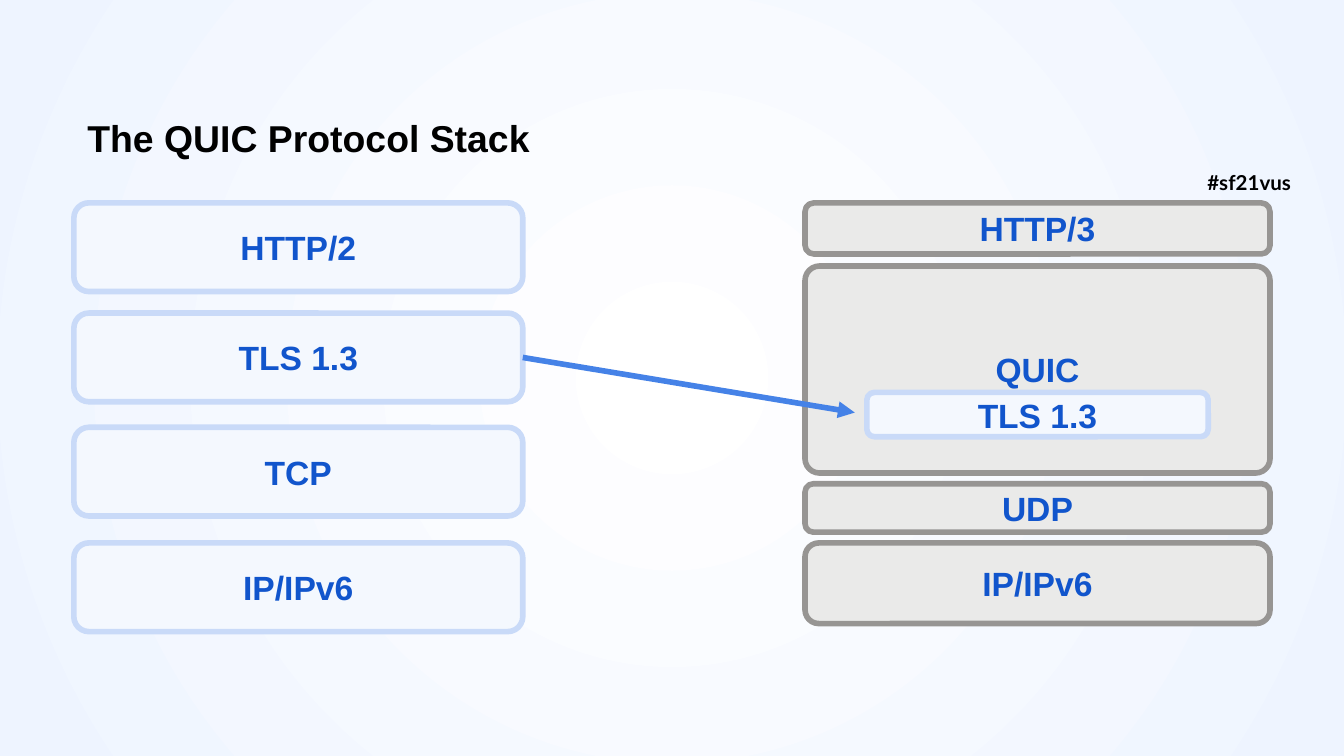
from lxml.etree import SubElement
from pptx import Presentation
from pptx.dml.color import RGBColor
from pptx.enum.shapes import MSO_CONNECTOR, MSO_SHAPE
from pptx.enum.text import MSO_ANCHOR, MSO_AUTO_SIZE, PP_ALIGN
from pptx.oxml.ns import qn
from pptx.util import Inches, Pt

COLS, ROWS = 100, 56.25
CELL = Inches(10) / COLS
BLUE = ("F4F8FE", "C9DAF8")
GREY = ("EAEAE9", "979593")
OLD_STACK = [("HTTP/2", 15.1), ("TLS 1.3", 23.3), ("TCP", 31.8), ("IP/IPv6", 40.4)]
NEW_STACK = [("HTTP/3", 15.1, 3.8), ("QUIC", 19.8, 15.4), ("UDP", 36, 3.6), ("IP/IPv6", 40.4, 6)]


def grid(*cells):
    """Convert grid cells to lengths."""
    return [round(n * CELL) for n in cells]


def rgb(color):
    """Convert a hex string to a colour."""
    return RGBColor.from_string(color)


def add_run(p, text, size, color, font="Arial"):
    """Add a bold run to a paragraph."""
    r = p.add_run()
    r.text = text
    r.font.name, r.font.size, r.font.bold = font, Pt(size), True
    r.font.color.rgb = rgb(color)


def set_margins(tf):
    """Give a text frame equal insets on all sides."""
    tf.margin_left = tf.margin_right = tf.margin_top = tf.margin_bottom = Inches(0.1)


def set_background(s):
    """Fill the slide with a gradient that spreads from its centre."""
    fill = s.background.fill
    fill.gradient()
    for stop, color in zip(fill.gradient_stops, ("FFFFFF", "EEF4FF")):
        stop.color.rgb = rgb(color)
    grad = s.element.find(".//" + qn("a:gradFill"))
    grad.remove(grad.find(qn("a:lin")))
    way = SubElement(grad, qn("a:path"), path="circle")
    SubElement(way, qn("a:fillToRect"), {side: "50000" for side in "ltrb"})


def set_title(s, text):
    """Place and fill the title placeholder."""
    sp = s.shapes.title
    sp.left, sp.top, sp.width, sp.height = grid(5.5, 7.85, 74.5, 4.8)
    tf = sp.text_frame
    tf.auto_size, tf.vertical_anchor = MSO_AUTO_SIZE.NONE, MSO_ANCHOR.MIDDLE
    set_margins(tf)
    p = tf.paragraphs[0]
    p.alignment = PP_ALIGN.LEFT
    add_run(p, text, 20, "000000")


def add_hashtag(s, text):
    """Add the event hashtag at the right edge."""
    tf = s.shapes.add_textbox(*grid(88.85, 11.75, 11.15, 3.9)).text_frame
    tf.word_wrap, tf.auto_size = True, MSO_AUTO_SIZE.SHAPE_TO_FIT_TEXT
    set_margins(tf)
    add_run(tf.paragraphs[0], text, 11, "000000", "Lato")


def add_layer(s, text, box, colors, corner=0.17):
    """Add a rounded box for one protocol layer."""
    sp = s.shapes.add_shape(MSO_SHAPE.ROUNDED_RECTANGLE, *grid(*box))
    sp.adjustments[0] = corner
    sp.shadow.inherit = False
    sp.fill.solid()
    sp.fill.fore_color.rgb = rgb(colors[0])
    sp.line.color.rgb = rgb(colors[1])
    sp.line.width = Pt(3)
    tf = sp.text_frame
    tf.word_wrap, tf.vertical_anchor = True, MSO_ANCHOR.MIDDLE
    p = tf.paragraphs[0]
    p.alignment = PP_ALIGN.CENTER
    add_run(p, text, 18, "1155CC")
    return sp


def add_arrow(s, source, end):
    """Draw an arrow from a box's right side to a grid point."""
    start = source.left + source.width, source.top + source.height // 2
    line = s.shapes.add_connector(MSO_CONNECTOR.STRAIGHT, *start, *grid(*end))
    line.begin_connect(source, 3)
    line.line.color.rgb = rgb("4582E7")
    line.line.width = Pt(3)
    ln = line._element.spPr.find(qn("a:ln"))
    SubElement(ln, qn("a:tailEnd"), type="triangle")
    SubElement(line._element.spPr, qn("a:effectLst"))


def main():
    """Build the slide."""
    prs = Presentation()
    prs.slide_width, prs.slide_height = grid(COLS, ROWS)
    s = prs.slides.add_slide(prs.slide_layouts[5])
    set_background(s)
    add_hashtag(s, "#sf21vus")
    set_title(s, "The QUIC Protocol Stack")
    layers = {text: add_layer(s, text, (5.5, top, 33.4, 6.6), BLUE) for text, top in OLD_STACK}
    for text, top, height in NEW_STACK:
        corner = 0.07 if text == "QUIC" else 0.17
        add_layer(s, text, (59.9, top, 34.6, height), GREY, corner)
    add_layer(s, "TLS 1.3", (64.5, 29.2, 25.4, 3.3), BLUE)
    add_arrow(s, layers["TLS 1.3"], (63.6, 30.7))
    prs.save("out.pptx")


if __name__ == "__main__":
    main()
